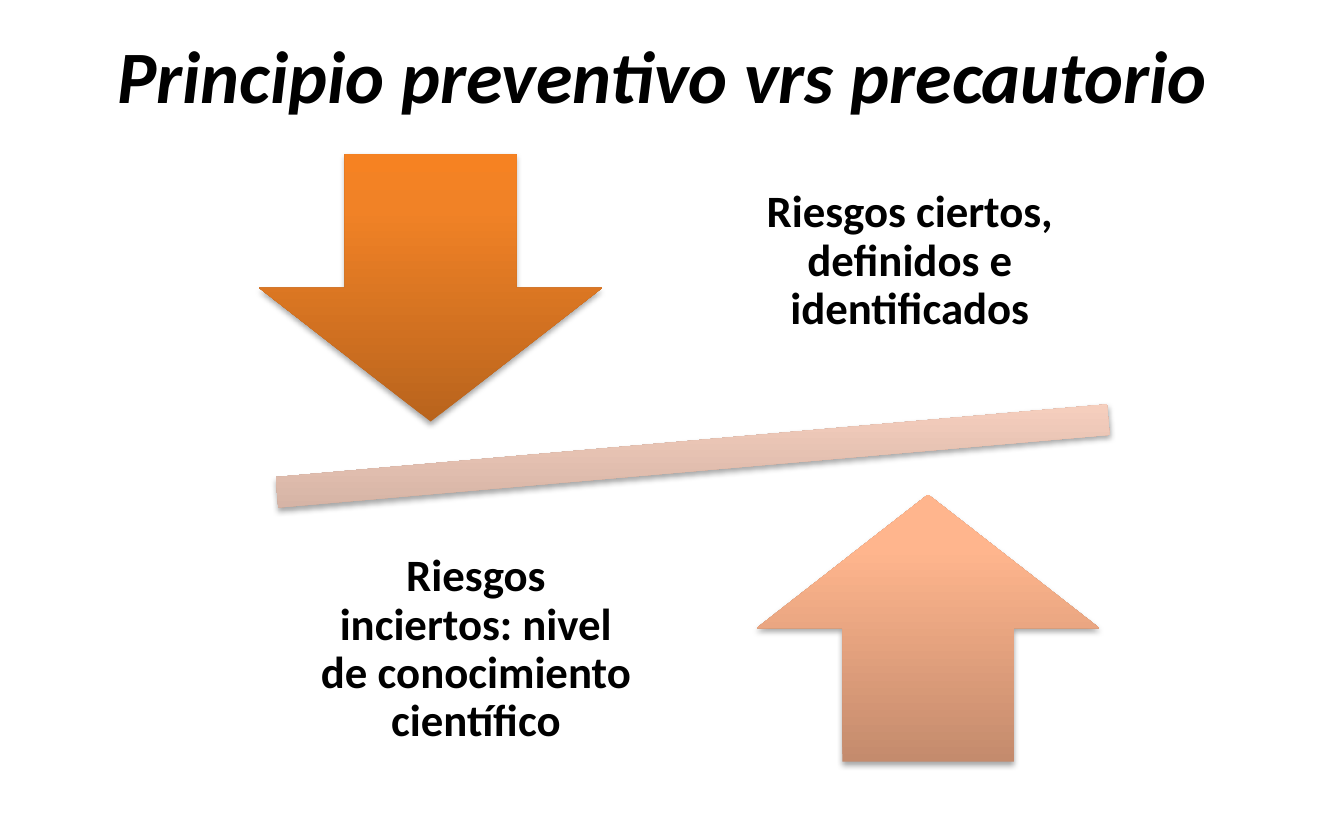
import copy

import pptx
import pptx.dml.color
import pptx.enum.shapes
import pptx.enum.text
import pptx.oxml
import pptx.oxml.ns
import pptx.util
from pptx.util import Cm

SHAPE = pptx.enum.shapes.MSO_SHAPE
FONT = "Calibri"
BLACK = "000000"
ARROW_SIZE = (6.48, 5.05)
LABEL_SIZE = (6.91, 5.31)
SHADOW_XML = (
    '<a:outerShdw %s blurRad="39370" dist="22860" dir="5400000" rotWithShape="0">'
    '<a:srgbClr val="000000"><a:alpha val="35000"/></a:srgbClr></a:outerShdw>'
    % pptx.oxml.ns.nsdecls("a")
)


def color(value):
    return pptx.dml.color.RGBColor.from_string(value)


def format_text(text_frame, size, italic=False, line_spacing=None):
    """Centre the text both ways and set it in bold black."""
    text_frame.word_wrap = True
    text_frame.vertical_anchor = pptx.enum.text.MSO_ANCHOR.MIDDLE
    for paragraph in text_frame.paragraphs:
        paragraph.alignment = pptx.enum.text.PP_ALIGN.CENTER
        if line_spacing:
            paragraph.line_spacing = line_spacing
        for run in paragraph.runs:
            run.font.name = FONT
            run.font.size = pptx.util.Pt(size)
            run.font.bold = True
            run.font.italic = italic
            run.font.color.rgb = color(BLACK)


def add_title(slide, text):
    title = slide.shapes.title
    title.left, title.top = Cm(1.09), Cm(0.08)
    title.width, title.height = Cm(22.86), Cm(2.64)
    title.text_frame.text = text
    format_text(title.text_frame, 39.6, italic=True)


def fill_gradient(shape, colors):
    """Fill from bottom to top with three stops, upright even if rotated."""
    shape.fill.gradient()
    shape.fill.gradient_angle = 90
    gradient = shape._element.spPr.find(pptx.oxml.ns.qn("a:gradFill"))
    gradient.set("rotWithShape", "0")
    stop_list = gradient.find(pptx.oxml.ns.qn("a:gsLst"))
    stop_list.append(copy.deepcopy(stop_list[-1]))
    for stop, position, value in zip(shape.fill.gradient_stops, (0, 0.8, 1), colors):
        stop.position = position
        stop.color.rgb = color(value)


def add_gradient_shape(slide, kind, left, top, size, colors, rotation=0):
    width, height = size
    shape = slide.shapes.add_shape(kind, Cm(left), Cm(top), Cm(width), Cm(height))
    shape.rotation = rotation
    fill_gradient(shape, colors)
    shape.line.fill.background()
    # Soft shadow straight below
    shape.shadow.inherit = False
    effects = shape._element.spPr.find(pptx.oxml.ns.qn("a:effectLst"))
    effects.append(pptx.oxml.parse_xml(SHADOW_XML))


def add_label(slide, left, top, text):
    width, height = LABEL_SIZE
    label = slide.shapes.add_textbox(Cm(left), Cm(top), Cm(width), Cm(height))
    text_frame = label.text_frame
    text_frame.margin_left = text_frame.margin_right = Cm(0.48)
    text_frame.margin_top = text_frame.margin_bottom = Cm(0.48)
    text_frame.text = text
    format_text(text_frame, 24, line_spacing=0.9)


def main():
    presentation = pptx.Presentation()
    presentation.slide_width = Cm(25.4)
    presentation.slide_height = Cm(15.88)
    slide = presentation.slides.add_slide(presentation.slide_layouts[5])

    add_title(slide, "Principio preventivo vrs precautorio")

    # Tilted balance bar
    add_gradient_shape(slide, SHAPE.MATH_MINUS, 2.36, 7.39, (21.46, 2.46),
                       ("C1A396", "FBD3C2", "FDD4C2"), rotation=355)

    # Preventive side
    add_gradient_shape(slide, SHAPE.DOWN_ARROW, 4.9, 2.92, ARROW_SIZE,
                       ("B9641D", "F18226", "F68222"))
    add_label(slide, 13.74, 2.29, "Riesgos ciertos, definidos e identificados")

    # Precautionary side
    add_gradient_shape(slide, SHAPE.UP_ARROW, 14.3, 9.35, ARROW_SIZE,
                       ("C48B6D", "FFB58D", "FFB68F"))
    add_label(slide, 5.54, 9.63,
              "Riesgos inciertos: nivel de conocimiento científico")

    presentation.save("out.pptx")


if __name__ == "__main__":
    main()
